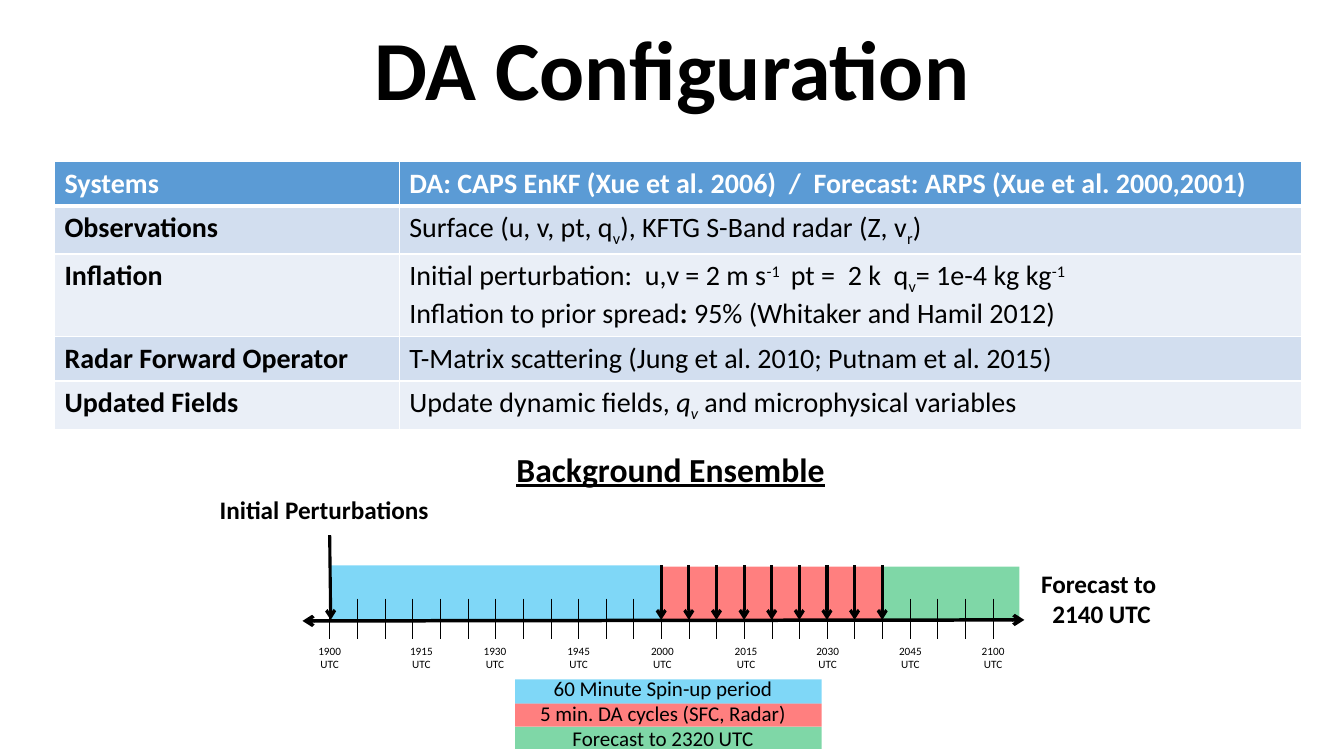
from lxml import etree
from pptx import Presentation, util as u
from pptx.dml.color import RGBColor
from pptx.enum import shapes, text
from pptx.oxml import ns

PX = 9144
COLOURS = {"ink": "000000", "white": "FFFFFF", "header": "5B9BD5", "dark_band": "D2DEEF",
           "light_band": "EAEFF7", "spin_up": "00B0F0", "cycles": "FF0000", "forecast": "00B050"}
SYSTEMS = [
    (44, "Systems", [[("DA: CAPS EnKF (Xue et al. 2006)  /  Forecast: ARPS (Xue et al. 2000,2001)", "b")]]),
    (48, "Observations", [[("Surface (u, v, pt, q", ""), ("v", "-"), ("), KFTG S-Band radar (Z, v", ""),
                           ("r", "-"), (")", "")]]),
    (81, "Inflation", [[("Initial perturbation:  u,v = 2 m s", ""), ("-1   ", "+"), ("pt =  2 k  q", ""),
                        ("v", "-"), ("= 1e-4 kg kg", ""), ("-1", "+")],
                       [("Inflation to prior spread", ""), (":", "b"), (" 95% (Whitaker and Hamil 2012)", "")]]),
    (44, "Radar Forward Operator", [[("T-Matrix scattering (Jung et al. 2010; Putnam et al. 2015)", "")]]),
    (48, "Updated Fields", [[("Update dynamic fields, ", ""), ("q", "i"), ("v", "i-"),
                             (" and microphysical variables", "")]]),
]
TIME_LABELS = [(27, "1900\nUTC"), (118, "1915\nUTC"), (191, "1930 UTC"), (274, "1945 UTC"), (357, "2000 UTC"),
               (440, "2015 UTC"), (521, "2030 UTC"), (603, "2045 UTC"), (685, "2100 UTC")]
LEGEND = [("spin_up", 24, "60 Minute Spin-up period"), ("cycles", 23, "5 min. DA cycles (SFC, Radar)"),
          ("forecast", 22, "Forecast to 2320 UTC")]


def px(*lengths):
    """Turn px lengths into EMU."""
    return [u.Emu(round(length * PX)) for length in lengths]


def colour(name):
    """Look up a named colour."""
    return RGBColor.from_string(COLOURS[name])


def add_span(para, words, size, style="", ink="ink"):
    """Add one run; style letters are b, i, u, + (raised) and - (lowered)."""
    span = para.add_run()
    span.text = words
    font = span.font
    font.name, font.size = "Calibri", u.Pt(size)
    font.bold, font.italic, font.underline = "b" in style, "i" in style, "u" in style
    font.color.rgb = colour(ink)
    for mark, shift in (("+", "30000"), ("-", "-25000")):
        if mark in style:
            span._r.get_or_add_rPr().set("baseline", shift)


def fill_frame(frame, paragraphs, size, ink="ink", align=None):
    """Write paragraphs, each a list of (words, style), into a text frame."""
    for index, spans in enumerate(paragraphs):
        para = frame.add_paragraph() if index else frame.paragraphs[0]
        para.alignment = align
        for words, style in spans:
            if words == "\v":
                para.add_line_break()
            else:
                add_span(para, words, size, style, ink)


def add_text(page, box, paragraphs, size, wrap=True, align=text.PP_ALIGN.CENTER):
    """Add a text box."""
    frame = page.shapes.add_textbox(*px(*box)).text_frame
    frame.word_wrap = wrap
    fill_frame(frame, paragraphs, size, align=align)


def add_band(page, box, name):
    """Add a half-transparent rectangle."""
    band = page.shapes.add_shape(shapes.MSO_SHAPE.RECTANGLE, *px(*box))
    band.shadow.inherit = False
    band.line.fill.background()
    band.fill.solid()
    band.fill.fore_color.rgb = colour(name)
    tint = band._element.spPr.find(".//" + ns.qn("a:srgbClr"))
    etree.SubElement(tint, ns.qn("a:alpha"), val="50000")


def add_line(page, start, end, width, arrows=()):
    """Add a black line with the given arrow ends."""
    line = page.shapes.add_connector(shapes.MSO_CONNECTOR.STRAIGHT, *px(*start, *end))
    line.line.width = u.Pt(width)
    line.line.color.rgb = colour("ink")
    for arrow in arrows:
        etree.SubElement(line.line._ln, ns.qn("a:" + arrow), type="arrow")
    etree.SubElement(line._element.spPr, ns.qn("a:effectLst"))


def add_title(page, box):
    """Place and format the slide title."""
    title = page.shapes.title
    title.left, title.top, title.width, title.height = px(*box)
    frame = title.text_frame
    frame.vertical_anchor = text.MSO_ANCHOR.MIDDLE
    frame.auto_size = text.MSO_AUTO_SIZE.NONE
    fill_frame(frame, [[("DA Configuration", "b")]], 60, align=text.PP_ALIGN.CENTER)
    frame.paragraphs[0].line_spacing = 0.9


def format_cell(cell, fill, bottom):
    """Fill a cell and give it white borders."""
    cell.fill.solid()
    cell.fill.fore_color.rgb = colour(fill)
    properties = cell._tc.get_or_add_tcPr()
    for index, side in enumerate("LRTB"):
        width = bottom if side == "B" else 1
        border = etree.Element(ns.qn("a:ln" + side), w=str(u.Pt(width)))
        paint = etree.SubElement(border, ns.qn("a:solidFill"))
        etree.SubElement(paint, ns.qn("a:srgbClr"), val=COLOURS["white"])
        properties.insert(index, border)


def add_systems_table(page, box):
    """Add the table of system settings."""
    table = page.shapes.add_table(len(SYSTEMS), 2, *px(*box)).table
    table.columns[0].width, table.columns[1].width = px(342, box[2] - 342)
    for index, (height, heading, details) in enumerate(SYSTEMS):
        table.rows[index].height = px(height)[0]
        fill = ("dark_band" if index % 2 else "light_band") if index else "header"
        for column, paragraphs in enumerate(([[(heading, "b")]], details)):
            cell = table.cell(index, column)
            format_cell(cell, fill, 1 if index else 3)
            fill_frame(cell.text_frame, paragraphs, 20, "ink" if index else "white")


def add_timeline(page, box):
    """Add the time axis with its periods, ticks, cycle arrows and labels."""
    left, top, width, height = box
    axis = top + 129
    ticks = [left + 27 + 27.4 * step for step in range(25)]
    start, first, last = ticks[0], ticks[12], ticks[20]
    add_band(page, (first, top + 76, last - first, 55), "cycles")
    add_band(page, (last, top + 76, left + 711 - last, 52), "forecast")
    add_band(page, (start, top + 75, first - start, 53), "spin_up")
    add_line(page, (left, axis + 1), (left + width, axis), 2.5, ("headEnd", "tailEnd"))
    for tick in ticks:
        add_line(page, (tick, top + 108), (tick, top + 148), 0.25)
    for centre, label in TIME_LABELS:
        add_text(page, (left + centre - 30, top + 148, 60, 37),
                 [[(line, "")] for line in label.split("\n")], 8)
    add_text(page, (left - 92, top, 231, 40), [[("Initial Perturbations", "b")]], 18, False, None)
    add_line(page, (start, top + 45), (start + 1, axis), 2.25, ("tailEnd",))
    for tick in ticks[12:21]:
        add_line(page, (tick, top + 75), (tick, axis), 2.25, ("tailEnd",))
    add_text(page, (left + width + 6, top + 73, 141, 71),
             [[("Forecast to ", "b"), ("\v", ""), ("2140 UTC", "b")]], 18, False)


def add_legend(page, box):
    """Add the stacked colour key."""
    left, top, width, height = box
    bottom = top + 9
    for name, thickness, label in LEGEND:
        add_band(page, (left + 52, bottom, 304, thickness), name)
        bottom += thickness
    add_text(page, box, [[(label, "")] for name, thickness, label in LEGEND], 15)


def main():
    """Build the slide."""
    deck = Presentation()
    deck.slide_width, deck.slide_height = px(1333, 750)
    page = deck.slides.add_slide(deck.slide_layouts[5])
    add_title(page, (0, 0, 1333, 145))
    add_systems_table(page, (54, 160, 1237, 265))
    add_legend(page, (459, 665, 397, 86))
    add_timeline(page, (300, 486, 716, 185))
    add_text(page, (319, 440, 692, 50), [[("Background Ensemble", "bu")]], 24)
    deck.save("out.pptx")


if __name__ == "__main__":
    main()
